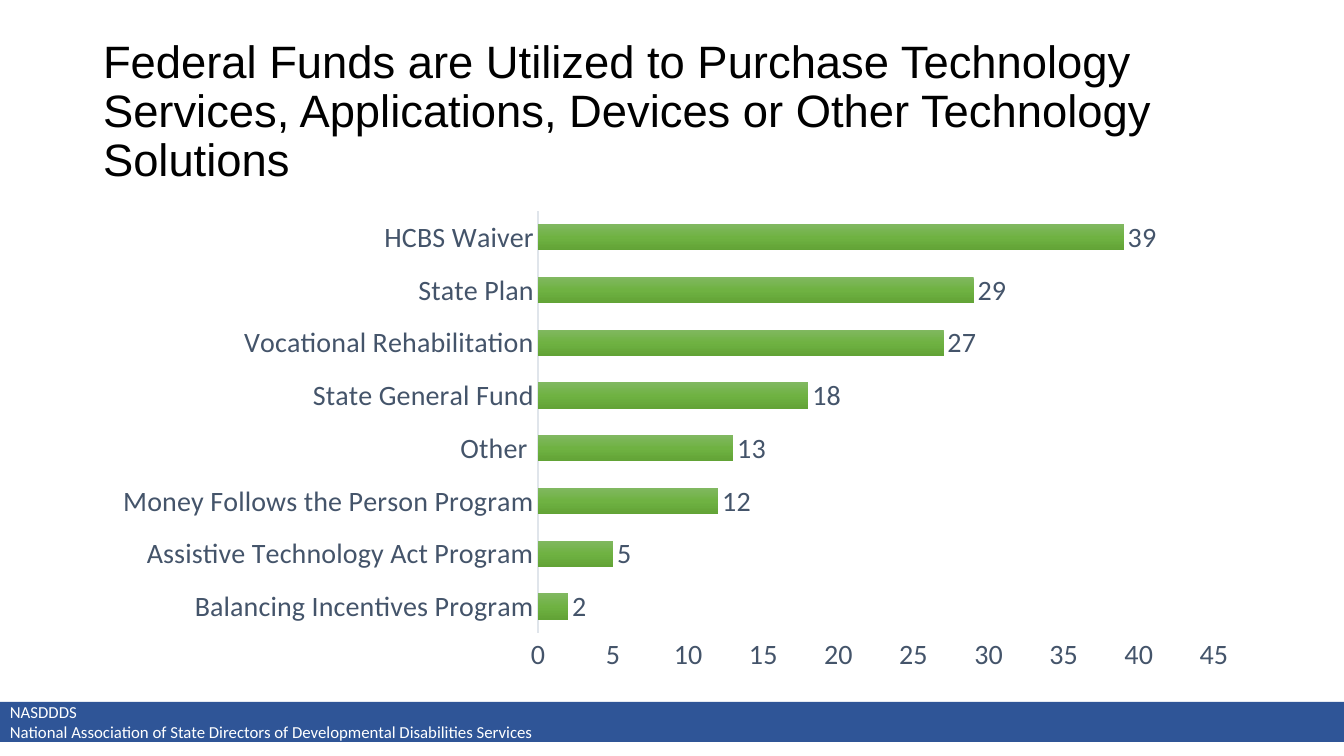
from pptx import Presentation
from pptx import util as u
from pptx.chart.data import CategoryChartData
from pptx.dml.color import RGBColor
from pptx.enum import chart as c, shapes, text
from pptx.oxml import parse_xml
from pptx.oxml.ns import nsdecls

# Content
TITLE = ("Federal Funds are Utilized to Purchase Technology Services, "
         "Applications, Devices or Other Technology Solutions")
FUNDING_SOURCES = [
    ("Balancing Incentives Program", 2),
    ("Assistive Technology Act Program", 5),
    ("Money Follows the Person Program", 12),
    ("Other ", 13),
    ("State General Fund", 18),
    ("Vocational Rehabilitation", 27),
    ("State Plan", 29),
    ("HCBS Waiver", 39),
]
FOOTER_LINES = [
    "NASDDDS",
    "National Association of State Directors of Developmental Disabilities Services",
]

# Colours
BLACK = RGBColor(0x00, 0x00, 0x00)
WHITE = RGBColor(0xFF, 0xFF, 0xFF)
SLATE = RGBColor(0x44, 0x54, 0x6A)
PALE_GREY = RGBColor(0xE0, 0xE5, 0xEB)
BAND_BLUE = RGBColor(0x2F, 0x55, 0x97)
BAR_STOPS = [
    (0, RGBColor(0x81, 0xB8, 0x61)),
    (50, RGBColor(0x6F, 0xB2, 0x42)),
    (100, RGBColor(0x62, 0xA3, 0x36)),
]

# Geometry in px: left, top, width, height
PX_PER_INCH = 100.8
SLIDE_SIZE = (1344, 756)
TITLE_BOX = (93, 40, 1159, 146)
CHART_BOX = (101, 202, 1151, 480)
PLOT_BOX = (538, 211, 676, 422)
FOOTER_BOX = (0, 702, 1344, 40)


def px(length):
    return u.Inches(length / PX_PER_INCH)


def box(lengths):
    return [px(length) for length in lengths]


def style_font(font, name, size, color):
    font.name = name
    font.size = u.Pt(size)
    font.color.rgb = color


def add_run(paragraph, words, name, size, color):
    run = paragraph.add_run()
    run.text = words
    style_font(run.font, name, size, color)


def add_title(slide):
    title = slide.shapes.title
    title.left, title.top, title.width, title.height = box(TITLE_BOX)
    frame = title.text_frame
    frame.word_wrap = True
    frame.auto_size = text.MSO_AUTO_SIZE.NONE
    frame.vertical_anchor = text.MSO_ANCHOR.MIDDLE
    paragraph = frame.paragraphs[0]
    paragraph.alignment = text.PP_ALIGN.LEFT
    paragraph.line_spacing = 0.9
    add_run(paragraph, TITLE, "Arial", 32.4, BLACK)


def place_plot(chart):
    left, top, width, height = CHART_BOX
    plot_left, plot_top, plot_width, plot_height = PLOT_BOX
    fractions = {"x": (plot_left - left) / width, "y": (plot_top - top) / height,
                 "w": plot_width / width, "h": plot_height / height}
    modes = "".join(f'<c:{key}Mode val="edge"/>' for key in "xy")
    sizes = "".join(f'<c:{key} val="{value:.4f}"/>' for key, value in fractions.items())
    layout = parse_xml(
        f'<c:layout {nsdecls("c")}><c:manualLayout><c:layoutTarget val="inner"/>'
        f'{modes}{sizes}</c:manualLayout></c:layout>')
    plot_area = chart.plots[0]._element.getparent()
    for existing in plot_area.xpath("c:layout"):
        plot_area.remove(existing)
    plot_area.insert(0, layout)


def fill_bars(series):
    stops = "".join(
        f'<a:gs pos="{percent * 1000}"><a:srgbClr val="{color}"/></a:gs>'
        for percent, color in BAR_STOPS)
    gradient = parse_xml(
        f'<a:gradFill {nsdecls("a")} rotWithShape="1"><a:gsLst>{stops}</a:gsLst>'
        '<a:lin ang="5400000" scaled="0"/></a:gradFill>')
    series.format.line.fill.background()
    series._element.get_or_add_spPr().insert(0, gradient)


def add_funding_chart(slide):
    names, counts = zip(*FUNDING_SOURCES)
    data = CategoryChartData()
    data.categories = names
    data.add_series("Series 1", counts)
    chart = slide.shapes.add_chart(
        c.XL_CHART_TYPE.BAR_CLUSTERED, *box(CHART_BOX), data).chart
    chart.has_title = False
    chart.has_legend = False
    style_font(chart.font, "Calibri", 20, BLACK)

    # Axes
    for axis in (chart.category_axis, chart.value_axis):
        axis.has_major_gridlines = False
        axis.major_tick_mark = c.XL_TICK_MARK.NONE
        axis.minor_tick_mark = c.XL_TICK_MARK.NONE
        style_font(axis.tick_labels.font, "Calibri", 20, SLATE)
    chart.category_axis.format.line.color.rgb = PALE_GREY
    chart.category_axis.format.line.width = u.Pt(0.75)
    chart.value_axis.format.line.fill.background()
    chart.value_axis.minimum_scale = 0
    chart.value_axis.maximum_scale = 45
    chart.value_axis.major_unit = 5

    # Bars and value labels
    plot = chart.plots[0]
    plot.gap_width = 100
    plot.vary_by_categories = False
    fill_bars(plot.series[0])
    labels = plot.series[0].data_labels
    labels.show_value = True
    labels.position = c.XL_LABEL_POSITION.OUTSIDE_END
    style_font(labels.font, "Calibri", 20, SLATE)
    place_plot(chart)


def add_footer_band(slide):
    band = slide.shapes.add_shape(shapes.MSO_SHAPE.RECTANGLE, *box(FOOTER_BOX))
    band.shadow.inherit = False
    band.fill.solid()
    band.fill.fore_color.rgb = BAND_BLUE
    band.line.fill.background()
    frame = band.text_frame
    frame.word_wrap = True
    frame.vertical_anchor = text.MSO_ANCHOR.MIDDLE
    for index, line in enumerate(FOOTER_LINES):
        paragraph = frame.add_paragraph() if index else frame.paragraphs[0]
        paragraph.alignment = text.PP_ALIGN.LEFT
        add_run(paragraph, line, "Calibri", 12, WHITE)


def main():
    presentation = Presentation()
    presentation.slide_width, presentation.slide_height = box(SLIDE_SIZE)
    slide = presentation.slides.add_slide(presentation.slide_layouts[5])
    add_title(slide)
    add_funding_chart(slide)
    add_footer_band(slide)
    presentation.save("out.pptx")


if __name__ == "__main__":
    main()
